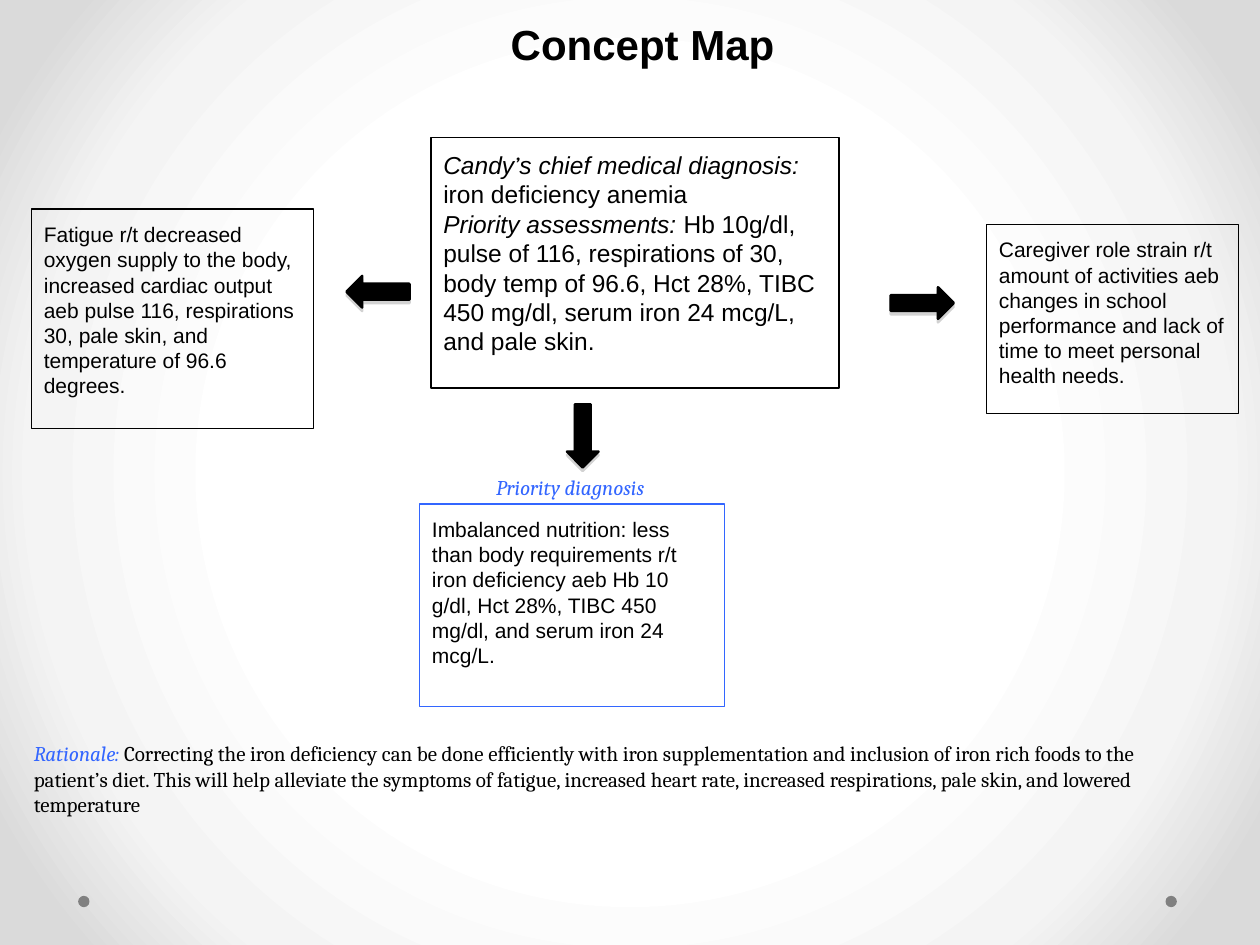
from dataclasses import dataclass

import pptx
import pptx.dml.color
import pptx.enum.shapes
import pptx.enum.text
import pptx.oxml
import pptx.oxml.ns
import pptx.util
from pptx.util import Inches

RGBColor = pptx.dml.color.RGBColor
Shape = pptx.enum.shapes.MSO_SHAPE
Anchor = pptx.enum.text.MSO_ANCHOR
Align = pptx.enum.text.PP_ALIGN

BLACK = RGBColor(0x00, 0x00, 0x00)
BLUE = RGBColor(0x33, 0x66, 0xFF)
GRAY = RGBColor(0x80, 0x80, 0x80)
BACKDROP_STOPS = (
    (50, RGBColor(0xFF, 0xFF, 0xFF)),
    (76, RGBColor(0xF4, 0xF4, 0xF4)),
    (92, RGBColor(0xDA, 0xDA, 0xDA)),
)


@dataclass(frozen=True)
class Area:
    left: float
    top: float
    width: float
    height: float

    def lengths(self) -> tuple:
        return tuple(Inches(n) for n in (self.left, self.top, self.width, self.height))


@dataclass(frozen=True)
class Span:
    text: str
    font: str = "Arial"
    italic: bool = False
    color: RGBColor = BLACK


@dataclass(frozen=True)
class Note:
    area: Area
    paragraphs: tuple
    size: int = 12
    outline: RGBColor | None = None


@dataclass(frozen=True)
class Arrow:
    kind: Shape
    area: Area


DIAGNOSIS = (
    (
        Span("Candy", italic=True),
        Span("’", font="Cambria", italic=True),
        Span("s chief medical diagnosis:", italic=True),
        Span(" iron deficiency anemia"),
    ),
    (
        Span("Priority assessments: ", italic=True),
        Span("Hb 10g/dl, pulse of 116, respirations of 30, body temp of 96.6, "
             "Hct 28%, TIBC 450 mg/dl, serum iron 24 mcg/L, and pale skin."),
    ),
)
FATIGUE = ((Span(
    "Fatigue r/t decreased oxygen supply to the body, increased cardiac output "
    "aeb pulse 116, respirations 30, pale skin, and temperature of 96.6 degrees."),),)
NUTRITION = ((Span(
    "Imbalanced nutrition: less than body requirements r/t iron deficiency aeb "
    "Hb 10 g/dl, Hct 28%, TIBC 450 mg/dl, and serum iron 24 mcg/L."),),)
CAREGIVER = ((Span(
    "Caregiver role strain r/t amount of activities aeb changes in school "
    "performance and lack of time to meet personal health needs."),),)
RATIONALE = ((
    Span("Rationale:", "Cambria", True, BLUE),
    Span(" Correcting the iron deficiency can be done efficiently with iron "
         "supplementation and inclusion of iron rich foods to the patient’s diet. "
         "This will help alleviate the symptoms of fatigue, increased heart rate, "
         "increased respirations, pale skin, and lowered temperature", "Cambria"),
),)
PRIORITY = ((Span("Priority diagnosis", "Cambria", True, BLUE),),)

NOTES = (
    Note(Area(3.42, 1.09, 3.24, 1.99), DIAGNOSIS, 14, BLACK),
    Note(Area(0.25, 1.66, 2.24, 1.74), FATIGUE, outline=BLACK),
    Note(Area(3.33, 4, 2.42, 1.61), NUTRITION, outline=BLUE),
    Note(Area(7.83, 1.78, 2, 1.5), CAREGIVER, outline=BLACK),
    Note(Area(0.17, 5.78, 9.33, 1), RATIONALE),
    Note(Area(3.84, 3.67, 1.9, 0.4), PRIORITY),
)
ARROWS = (
    Arrow(Shape.RIGHT_ARROW, Area(7.07, 2.28, 0.5, 0.25)),
    Arrow(Shape.LEFT_ARROW, Area(2.75, 2.19, 0.5, 0.25)),
    Arrow(Shape.DOWN_ARROW, Area(4.5, 3.21, 0.25, 0.5)),
)
DOTS = tuple(Area(left, 7.11, 0.09, 0.09) for left in (0.62, 9.25))


def paint_backdrop(page) -> None:
    page.background.fill.gradient()
    gradient = next(page.element.iter(pptx.oxml.ns.qn("a:gradFill")))
    stops = "".join(
        f'<a:gs pos="{place * 1000}"><a:srgbClr val="{color}"/></a:gs>'
        for place, color in BACKDROP_STOPS
    )
    radial = pptx.oxml.parse_xml(
        f'<a:gradFill {pptx.oxml.ns.nsdecls("a")} rotWithShape="1">'
        f'<a:gsLst>{stops}</a:gsLst><a:path path="circle">'
        '<a:fillToRect l="50000" t="50000" r="50000" b="50000"/></a:path></a:gradFill>'
    )
    gradient.getparent().replace(gradient, radial)


def write_title(page) -> None:
    title = page.shapes.title
    title.left, title.top, title.width, title.height = Area(3.1, 0.05, 4, 0.6).lengths()
    frame = title.text_frame
    frame.text = "Concept Map"
    frame.vertical_anchor = Anchor.MIDDLE
    para = frame.paragraphs[0]
    para.alignment = Align.CENTER
    font = para.runs[0].font
    font.name, font.size, font.bold = "Arial", pptx.util.Pt(24), True
    font.color.rgb = BLACK


def draw_note(page, note: Note) -> None:
    if note.outline is None:
        box = page.shapes.add_textbox(*note.area.lengths())
    else:
        box = page.shapes.add_shape(Shape.RECTANGLE, *note.area.lengths())
        box.shadow.inherit = False
        box.fill.background()
        box.line.color.rgb = note.outline
        box.line.width = pptx.util.Pt(0.75)
    frame = box.text_frame
    frame.word_wrap = True
    frame.vertical_anchor = Anchor.TOP
    frame.margin_left = frame.margin_right = Inches(0.1)
    frame.margin_top = frame.margin_bottom = Inches(0.1)
    for index, spans in enumerate(note.paragraphs):
        para = frame.add_paragraph() if index else frame.paragraphs[0]
        para.alignment = Align.LEFT
        for span in spans:
            run = para.add_run()
            run.text = span.text
            run.font.name = span.font
            run.font.size = pptx.util.Pt(note.size)
            run.font.italic = span.italic
            run.font.color.rgb = span.color


def draw_solid(page, kind: Shape, area: Area, color: RGBColor):
    shape = page.shapes.add_shape(kind, *area.lengths())
    shape.shadow.inherit = False
    shape.fill.solid()
    shape.fill.fore_color.rgb = color
    shape.line.fill.background()
    return shape


def draw_arrow(page, arrow: Arrow) -> None:
    shape = draw_solid(page, arrow.kind, arrow.area, BLACK)
    shape.line.color.rgb = BLACK
    shape.line.width = pptx.util.Pt(1.5)
    effects = next(shape.element.iter(pptx.oxml.ns.qn("a:effectLst")))
    effects.append(pptx.oxml.parse_xml(
        f'<a:outerShdw {pptx.oxml.ns.nsdecls("a")} blurRad="0" dist="{pptx.util.Pt(2)}" '
        f'dir="5400000" rotWithShape="0"><a:srgbClr val="{GRAY}">'
        '<a:alpha val="35000"/></a:srgbClr></a:outerShdw>'
    ))


def main() -> None:
    deck = pptx.Presentation()
    deck.slide_width, deck.slide_height = Inches(10), Inches(7.5)
    page = deck.slides.add_slide(deck.slide_layouts.get_by_name("Title Only"))
    paint_backdrop(page)
    write_title(page)
    for dot in DOTS:
        draw_solid(page, Shape.OVAL, dot, GRAY)
    for note in NOTES:
        draw_note(page, note)
    for arrow in ARROWS:
        draw_arrow(page, arrow)
    deck.save("out.pptx")


if __name__ == "__main__":
    main()
